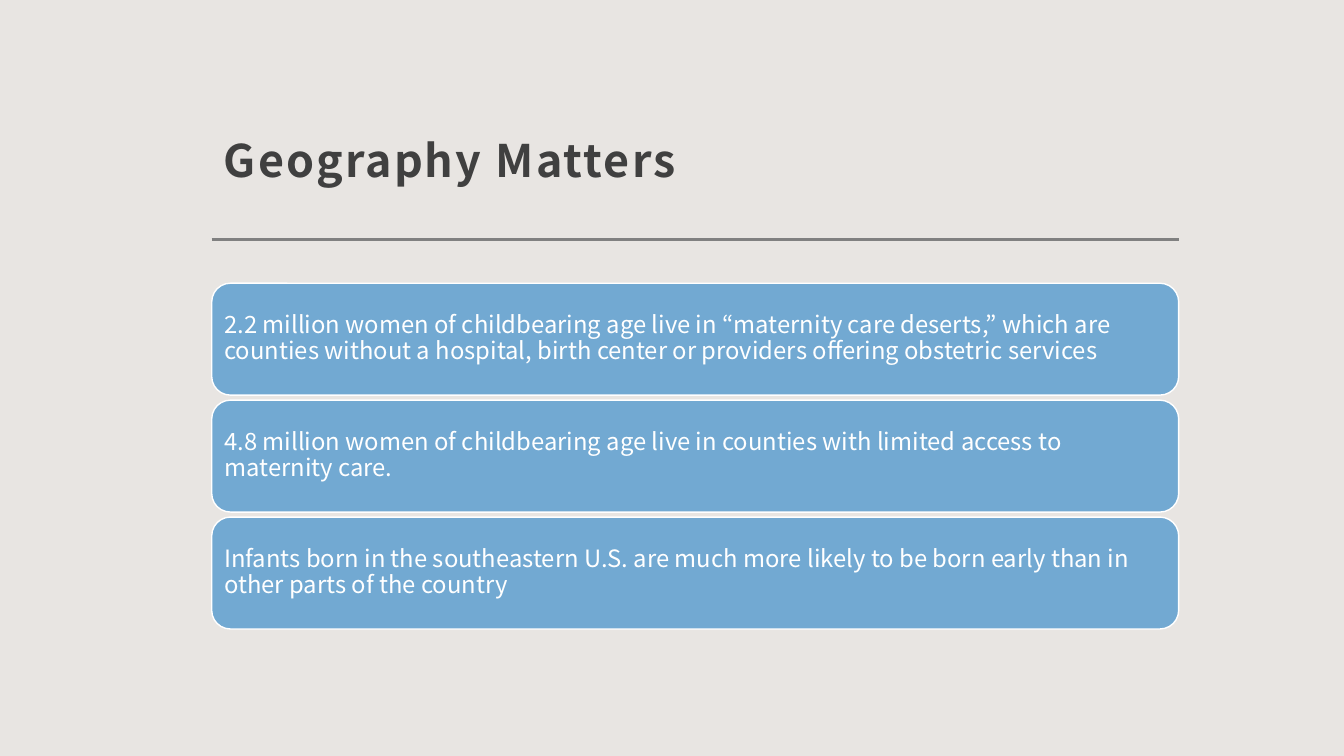
import pptx
import pptx.util
import pptx.dml.color
import pptx.enum.shapes
import pptx.enum.text
import pptx.oxml.ns
import lxml.etree

Inches = pptx.util.Inches
Pt = pptx.util.Pt
FONT = "Noto Sans CJK JP"
LEFT, WIDTH = 2.1, 9.59
CARD_TOP, CARD_HEIGHT, CARD_STEP = 2.81, 1.11, 1.16
FACTS = [
    "2.2 million women of childbearing age live in “maternity care deserts,” which are "
    "counties without a hospital, birth center or providers offering obstetric services",
    "4.8 million women of childbearing age live in counties with limited access to "
    "maternity care.",
    "Infants born in the southeastern U.S. are much more likely to be born early than in "
    "other parts of the country",
]


def color(value):
    return pptx.dml.color.RGBColor.from_string(value)


def write_text(shape, text, size, hex_color, spacing, anchor, insets, bold=False):
    tf = shape.text_frame
    tf.word_wrap = True
    tf.vertical_anchor = anchor
    tf.margin_left, tf.margin_top, tf.margin_right, tf.margin_bottom = map(Inches, insets)
    p = tf.paragraphs[0]
    p.alignment = pptx.enum.text.PP_ALIGN.LEFT
    p.line_spacing = spacing
    p.font.name = FONT
    p.font.size = Pt(size)
    p.font.bold = bold
    p.font.color.rgb = color(hex_color)
    r = p.add_run()
    r.text = text
    return r


def add_title(s, text):
    box = s.shapes.add_textbox(Inches(LEFT), Inches(0.48), Inches(WIDTH), Inches(1.47))
    r = write_text(box, text, 32, "404040", 1.3, pptx.enum.text.MSO_ANCHOR.BOTTOM,
                   (0.12, 0.12, 0.12, 0.1), bold=True)
    r.font._element.set("spc", "150")


def add_rule(s, y):
    line = s.shapes.add_connector(pptx.enum.shapes.MSO_CONNECTOR.STRAIGHT,
                                  Inches(LEFT), Inches(y), Inches(LEFT + WIDTH), Inches(y))
    line.line.color.rgb = color("808080")
    line.line.width = Pt(2)
    lxml.etree.SubElement(line._element.spPr, pptx.oxml.ns.qn("a:effectLst"))


def add_card(s, top, text):
    card = s.shapes.add_shape(pptx.enum.shapes.MSO_SHAPE.ROUNDED_RECTANGLE,
                              Inches(LEFT), Inches(top), Inches(WIDTH), Inches(CARD_HEIGHT))
    card.shadow.inherit = False
    card.fill.solid()
    card.fill.fore_color.rgb = color("72A9D2")
    card.line.color.rgb = color("FFFFFF")
    card.line.width = Pt(1)
    write_text(card, text, 17, "FFFFFF", 0.9, pptx.enum.text.MSO_ANCHOR.MIDDLE, (0.07,) * 4)


def main():
    prs = pptx.Presentation()
    prs.slide_width, prs.slide_height = Inches(13.33), Inches(7.5)
    s = prs.slides.add_slide(prs.slide_layouts[6])
    s.background.fill.solid()
    s.background.fill.fore_color.rgb = color("E8E5E2")
    add_rule(s, 2.38)
    add_title(s, "Geography Matters")
    for i, fact in enumerate(FACTS):
        add_card(s, CARD_TOP + i * CARD_STEP, fact)
    prs.save("out.pptx")


if __name__ == "__main__":
    main()
